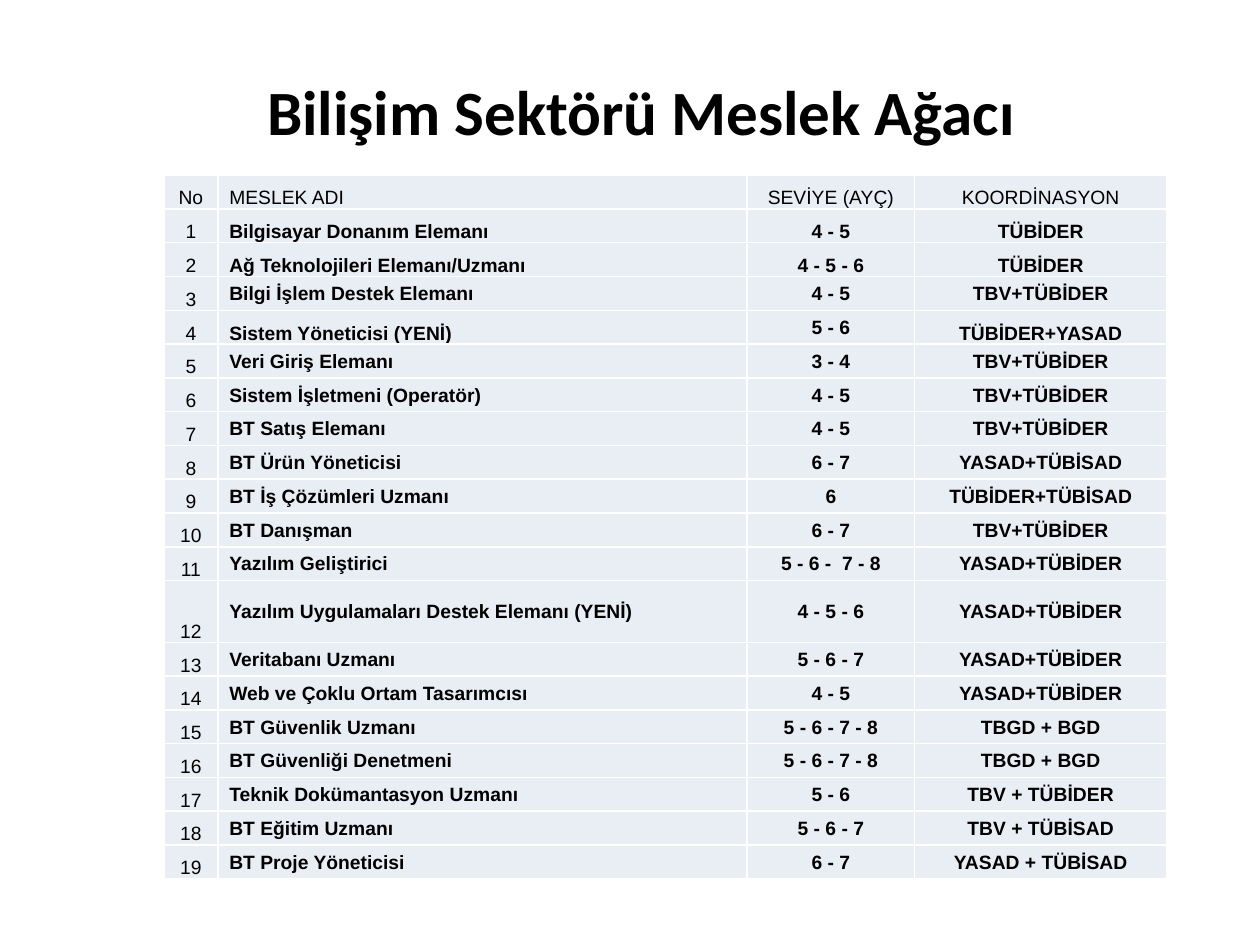
from lxml.etree import SubElement
from pptx import Presentation
from pptx.dml.color import RGBColor
from pptx.enum.text import MSO_ANCHOR as Anchor, MSO_AUTO_SIZE as AutoSize, PP_ALIGN as Align
from pptx.oxml.ns import qn
from pptx.util import Inches, Pt

COLORS = {"text": "000000", "cell": "E9EDF4", "border": "FFFFFF"}
TITLE_BOX = (0.67, 0.52, 9.06, 0.71)
TABLE_BOX = (1.3, 1.39, 7.95, 5.59)
COLUMN_WIDTHS = (0.43, 4.2, 1.33, 2)
TALL_ROW, TALL_HEIGHT = 12, 0.49
BOTTOM_ROWS = (0, 1, 2)
BOTTOM_CELLS = {(4, 1), (4, 3)}
HEADINGS = ("No", "MESLEK ADI", "SEVİYE (AYÇ)", "KOORDİNASYON")
OCCUPATIONS = (
    ("Bilgisayar Donanım Elemanı", "4 - 5", "TÜBİDER"),
    ("Ağ Teknolojileri Elemanı/Uzmanı", "4 - 5 - 6", "TÜBİDER"),
    ("Bilgi İşlem Destek Elemanı", "4 - 5", "TBV+TÜBİDER"),
    ("Sistem Yöneticisi (YENİ)", "5 - 6", "TÜBİDER+YASAD"),
    ("Veri Giriş Elemanı", "3 - 4", "TBV+TÜBİDER"),
    ("Sistem İşletmeni (Operatör)", "4 - 5", "TBV+TÜBİDER"),
    ("BT Satış Elemanı", "4 - 5", "TBV+TÜBİDER"),
    ("BT Ürün Yöneticisi", "6 - 7", "YASAD+TÜBİSAD"),
    ("BT İş Çözümleri Uzmanı", "6", "TÜBİDER+TÜBİSAD"),
    ("BT Danışman", "6 - 7", "TBV+TÜBİDER"),
    ("Yazılım Geliştirici", "5 - 6 -  7 - 8", "YASAD+TÜBİDER"),
    ("Yazılım Uygulamaları Destek Elemanı (YENİ)", "4 - 5 - 6", "YASAD+TÜBİDER"),
    ("Veritabanı Uzmanı", "5 - 6 - 7", "YASAD+TÜBİDER"),
    ("Web ve Çoklu Ortam Tasarımcısı", "4 - 5", "YASAD+TÜBİDER"),
    ("BT Güvenlik Uzmanı", "5 - 6 - 7 - 8", "TBGD + BGD"),
    ("BT Güvenliği Denetmeni", "5 - 6 - 7 - 8", "TBGD + BGD"),
    ("Teknik Dokümantasyon Uzmanı", "5 - 6", "TBV + TÜBİDER"),
    ("BT Eğitim Uzmanı", "5 - 6 - 7", "TBV + TÜBİSAD"),
    ("BT Proje Yöneticisi", "6 - 7", "YASAD + TÜBİSAD"),
)


def add_span(para, text, font, size, bold):
    """Add one formatted run to a paragraph."""
    span = para.add_run()
    span.text = text
    span.font.name = font
    span.font.size = Pt(size)
    span.font.bold = bold
    span.font.color.rgb = RGBColor.from_string(COLORS["text"])


def place_title(page, box):
    """Fill the title placeholder and move it to the box."""
    title = page.shapes.title
    title.left, title.top, title.width, title.height = map(Inches, box)
    frame = title.text_frame
    frame.auto_size = AutoSize.NONE
    frame.word_wrap = True
    frame.vertical_anchor = Anchor.MIDDLE
    frame.margin_left = Inches(1.45)
    para = frame.paragraphs[0]
    para.alignment = Align.LEFT
    add_span(para, "Bilişim Sektörü Meslek Ağacı", "Calibri", 36, True)


def set_borders(cell):
    """Draw a thin line on all four sides of a cell."""
    properties = cell._tc.get_or_add_tcPr()
    for side in ("a:lnL", "a:lnR", "a:lnT", "a:lnB"):
        line = SubElement(properties, qn(side), w=str(Pt(1)))
        fill = SubElement(line, qn("a:solidFill"))
        SubElement(fill, qn("a:srgbClr"), val=COLORS["border"])


def fill_cell(cell, text, row, column):
    """Write and format one cell according to its place in the table."""
    set_borders(cell)
    cell.fill.solid()
    cell.fill.fore_color.rgb = RGBColor.from_string(COLORS["cell"])
    is_name = column == 1
    cell.margin_left = Inches(0.09 if is_name else 0.01)
    cell.margin_top = cell.margin_right = Inches(0.01)
    cell.margin_bottom = 0
    at_bottom = column == 0 or row in BOTTOM_ROWS or (row, column) in BOTTOM_CELLS
    cell.vertical_anchor = Anchor.BOTTOM if at_bottom else Anchor.MIDDLE
    para = cell.text_frame.paragraphs[0]
    para.alignment = Align.LEFT if is_name else Align.CENTER
    add_span(para, text, "Arial", 11, row > 0 and column > 0)


def place_occupations(page, box):
    """Build the numbered table of occupations inside the box."""
    records = [HEADINGS]
    records += [(str(number), *item) for number, item in enumerate(OCCUPATIONS, 1)]
    frame = page.shapes.add_table(len(records), len(HEADINGS), *map(Inches, box))
    table = frame.table
    table.first_row = table.horz_banding = False
    for column, width in zip(table.columns, COLUMN_WIDTHS):
        column.width = Inches(width)
    row_height = (box[3] - TALL_HEIGHT) / (len(records) - 1)
    for row, record in enumerate(records):
        table.rows[row].height = Inches(TALL_HEIGHT if row == TALL_ROW else row_height)
        for column, text in enumerate(record):
            fill_cell(table.cell(row, column), text, row, column)


def main():
    """Create the deck with its single slide."""
    deck = Presentation()
    deck.slide_width, deck.slide_height = Inches(10), Inches(7.5)
    page = deck.slides.add_slide(deck.slide_layouts[5])
    place_title(page, TITLE_BOX)
    place_occupations(page, TABLE_BOX)
    deck.save("out.pptx")


if __name__ == "__main__":
    main()
